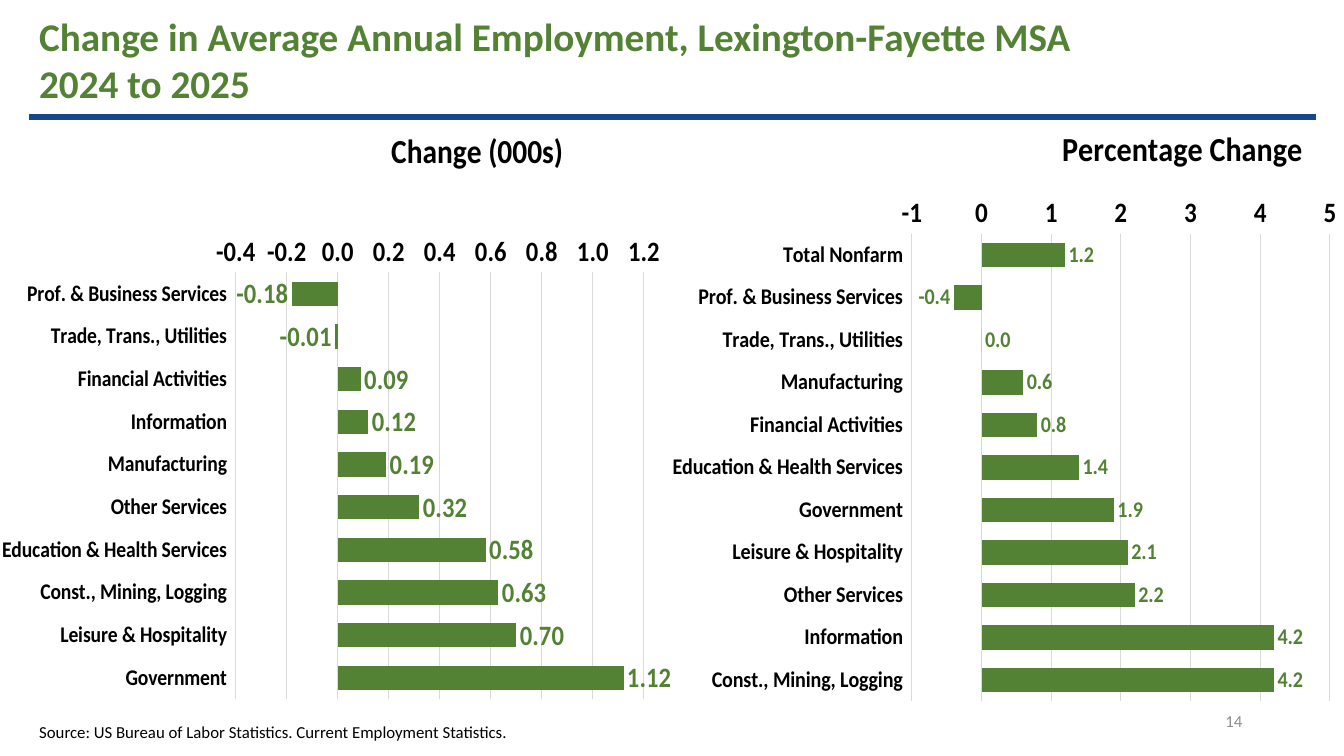
import pptx
import pptx.chart.data
import pptx.dml.color
import pptx.enum.chart
import pptx.enum.shapes
import pptx.enum.text
import pptx.oxml
import pptx.oxml.ns
import pptx.util
from pptx.util import Inches

FONT = "Calibri"
GREEN, BLUE, GREY, BLACK, GRID = "548235", "17468E", "8C8C8C", "000000", "D9D9D9"

TITLE = ["Change in Average Annual Employment, Lexington-Fayette MSA", "2024 to 2025"]
SOURCE = ["Source: US Bureau of Labor Statistics. Current Employment Statistics."]
PAGE_NUMBER = ["14"]

CHARTS = [
    {
        "title": "Change (000s)", "title_at": (0.54, 0.01),
        "box": (0.02, 1.15, 6.64, 5.93), "plot": (0.284, 0.262, 0.696, 0.714),
        "scale": (-0.4, 1.2, 0.2), "axis_format": "0.0",
        "label_format": "#,##0.00", "label_size": 20,
        "rows": [
            ("Prof. & Business Services", -0.18),
            ("Trade, Trans., Utilities", -0.01),
            ("Financial Activities", 0.09),
            ("Information", 0.12),
            ("Manufacturing", 0.19),
            ("Other Services", 0.32),
            ("Education & Health Services", 0.58),
            ("Const., Mining, Logging", 0.63),
            ("Leisure & Hospitality", 0.70),
            ("Government", 1.12),
        ],
    },
    {
        "title": "Percentage Change", "title_at": (0.525, 0.003),
        "box": (6.67, 1.17, 6.64, 5.93), "plot": (0.284, 0.194, 0.696, 0.782),
        "scale": (-1, 5, 1), "axis_format": "0",
        "label_format": "#,##0.0", "label_size": 16,
        "rows": [
            ("Total Nonfarm", 1.2),
            ("Prof. & Business Services", -0.4),
            ("Trade, Trans., Utilities", 0),
            ("Manufacturing", 0.6),
            ("Financial Activities", 0.8),
            ("Education & Health Services", 1.4),
            ("Government", 1.9),
            ("Leisure & Hospitality", 2.1),
            ("Other Services", 2.2),
            ("Information", 4.2),
            ("Const., Mining, Logging", 4.2),
        ],
    },
]


def rgb(value):
    return pptx.dml.color.RGBColor.from_string(value)


def style_font(font, size, color, bold=False):
    font.name = FONT
    font.size = pptx.util.Pt(size)
    font.bold = bold
    font.color.rgb = rgb(color)


def style_line(line, color, width):
    line.color.rgb = rgb(color)
    line.width = pptx.util.Pt(width)


def add_text(slide, box, lines, size, color, bold=False, align="LEFT", anchor="TOP"):
    frame = slide.shapes.add_textbox(*map(Inches, box)).text_frame
    frame.word_wrap = True
    frame.vertical_anchor = getattr(pptx.enum.text.MSO_ANCHOR, anchor)
    for index, line in enumerate(lines):
        paragraph = frame.add_paragraph() if index else frame.paragraphs[0]
        paragraph.alignment = getattr(pptx.enum.text.PP_ALIGN, align)
        run = paragraph.add_run()
        run.text = line
        style_font(run.font, size, color, bold)


def manual_layout(position, inner=False):
    """Build a c:layout element from fractions of the chart: x, y and optionally w, h."""
    names = ("x", "y", "w", "h")[:len(position)]
    parts = '<c:layoutTarget val="inner"/>' if inner else ""
    parts += "".join(f'<c:{name}Mode val="edge"/>' for name in names[:2])
    parts += "".join(f'<c:{name} val="{value}"/>' for name, value in zip(names, position))
    return pptx.oxml.parse_xml(
        f'<c:layout {pptx.oxml.ns.nsdecls("c")}>'
        f"<c:manualLayout>{parts}</c:manualLayout></c:layout>")


def replace_layout(parent, layout, index):
    for old in parent.findall(pptx.oxml.ns.qn("c:layout")):
        parent.remove(old)
    parent.insert(index, layout)


def add_bar_chart(slide, content):
    enums = pptx.enum.chart
    data = pptx.chart.data.CategoryChartData()
    data.categories = [name for name, _ in content["rows"]]
    data.add_series("Series 1", [value for _, value in content["rows"]])
    chart = slide.shapes.add_chart(
        enums.XL_CHART_TYPE.BAR_CLUSTERED, *map(Inches, content["box"]), data).chart
    style_font(chart.font, 20, BLACK, True)
    chart.has_legend = False

    chart.has_title = True
    title = chart.chart_title
    run = title.text_frame.paragraphs[0].add_run()
    run.text = content["title"]
    style_font(run.font, 24, BLACK, True)
    title.include_in_layout = False
    replace_layout(title._element, manual_layout(content["title_at"]), 1)
    plot_area = chart._chartSpace.chart.plotArea
    replace_layout(plot_area, manual_layout(content["plot"], inner=True), 0)

    category_axis, value_axis = chart.category_axis, chart.value_axis
    for axis, size in ((category_axis, 16), (value_axis, 20)):
        style_font(axis.tick_labels.font, size, BLACK, True)
        axis.major_tick_mark = axis.minor_tick_mark = enums.XL_TICK_MARK.NONE
    category_axis.reverse_order = True
    category_axis.tick_label_position = enums.XL_TICK_LABEL_POSITION.LOW
    style_line(category_axis.format.line, GRID, 0.75)
    value_axis.format.line.fill.background()
    style_line(value_axis.major_gridlines.format.line, GRID, 0.75)
    value_axis.minimum_scale, value_axis.maximum_scale, value_axis.major_unit = content["scale"]
    value_axis.tick_labels.number_format = content["axis_format"]
    value_axis.tick_labels.number_format_is_linked = False

    plot = chart.plots[0]
    plot.gap_width = 75
    plot.vary_by_categories = False
    series = plot.series[0]
    series.invert_if_negative = False
    series.format.fill.solid()
    series.format.fill.fore_color.rgb = rgb(GREEN)
    labels = series.data_labels
    labels.show_value = True
    labels.position = enums.XL_LABEL_POSITION.OUTSIDE_END
    labels.number_format = content["label_format"]
    labels.number_format_is_linked = False
    style_font(labels.font, content["label_size"], GREEN, True)


def main():
    presentation = pptx.Presentation()
    presentation.slide_width, presentation.slide_height = Inches(13.33), Inches(7.5)
    slide = presentation.slides.add_slide(presentation.slide_layouts[6])

    rule = slide.shapes.add_connector(
        pptx.enum.shapes.MSO_CONNECTOR.STRAIGHT,
        Inches(0.29), Inches(1.16), Inches(13.05), Inches(1.16))
    style_line(rule.line, BLUE, 4.5)
    rule._element.spPr.append(
        pptx.oxml.parse_xml(f'<a:effectLst {pptx.oxml.ns.nsdecls("a")}/>'))

    add_text(slide, (9.42, 6.95, 3, 0.4), PAGE_NUMBER, 12, GREY, align="RIGHT", anchor="MIDDLE")
    add_text(slide, (0.29, 0.07, 10.89, 1.04), TITLE, 28, GREEN, bold=True)
    add_text(slide, (0.29, 7.11, 10.16, 0.3), SOURCE, 12, BLACK)
    for content in CHARTS:
        add_bar_chart(slide, content)
    presentation.save("out.pptx")


if __name__ == "__main__":
    main()
